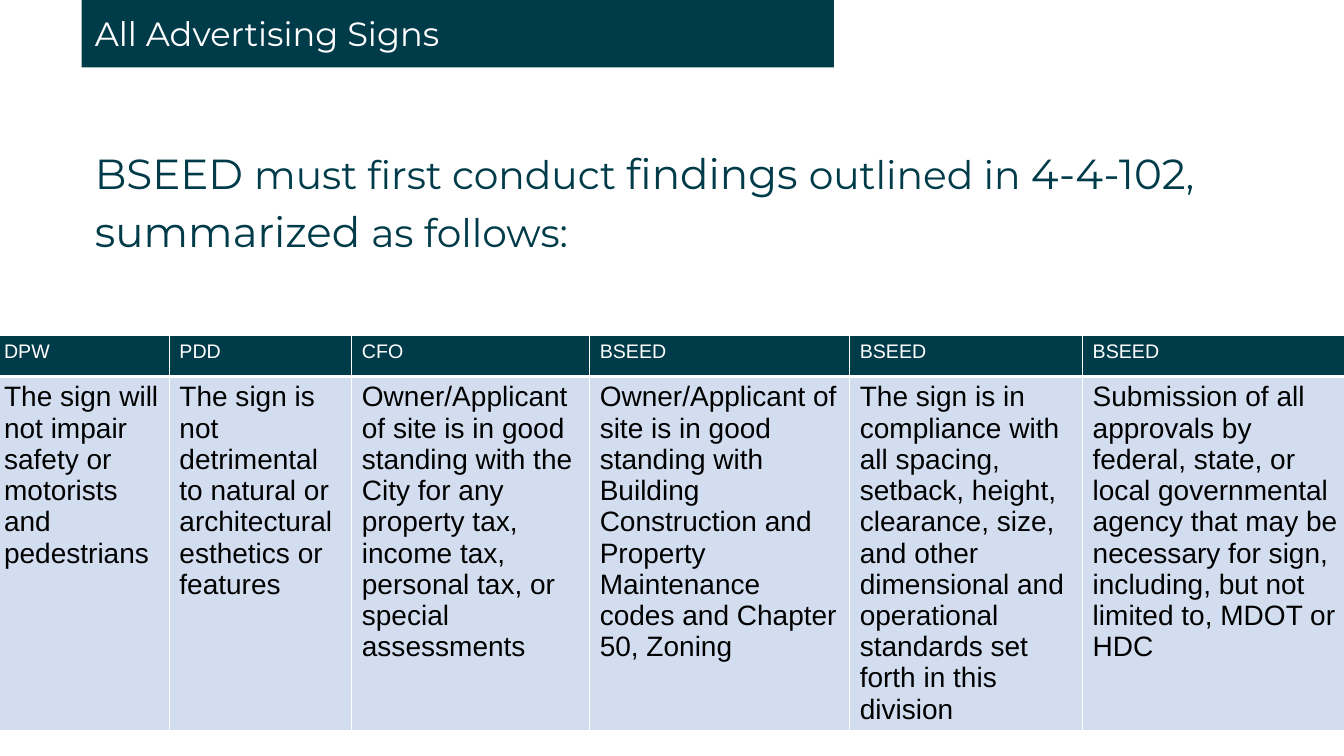
from dataclasses import dataclass

from lxml.etree import SubElement
from pptx import Presentation
from pptx.dml.color import RGBColor
from pptx.enum.shapes import MSO_SHAPE as Kind
from pptx.enum.text import MSO_ANCHOR as Anchor, MSO_AUTO_SIZE as Fit, PP_ALIGN as Align
from pptx.oxml.ns import qn
from pptx.util import Emu, Inches, Pt

WIDE, HIGH = Inches(13.33), Inches(7.5)
TEAL, PALE, WHITE, BLACK = "003B49", "D2DEEF", "FFFFFF", "000000"
LEFT = 6.08
HEAD_ROW, TEXT_ROW = 5.4, 46.67


@dataclass
class Box:
    """A place on the slide, in percent of its width and height."""
    left: float
    top: float
    width: float
    height: float


@dataclass
class Rule:
    """One finding: its department, its text and its column width in percent."""
    dept: str
    text: str
    width: float


@dataclass
class Look:
    """The style of one table row."""
    size: int
    ink: str
    fill: str
    base: int


RULES = [
    Rule("DPW", "The sign will not impair safety or motorists and pedestrians", 13.05),
    Rule("PDD", "The sign is not detrimental to natural or architectural esthetics "
         "or features", 13.58),
    Rule("CFO", "Owner/Applicant of site is in good standing with the City for any "
         "property tax, income tax, personal tax, or special assessments", 17.7),
    Rule("BSEED", "Owner/Applicant of site is in good standing with Building "
         "Construction and Property Maintenance codes and Chapter 50, Zoning", 19.35),
    Rule("BSEED", "The sign is in compliance with all spacing, setback, height, "
         "clearance, size, and other dimensional and operational standards set "
         "forth in this division", 17.33),
    Rule("BSEED", "Submission of all approvals by federal, state, or local "
         "governmental agency that may be necessary for sign, including, but not "
         "limited to, MDOT or HDC", 20.18),
]
HEAD = Look(14, WHITE, TEAL, 3)
BODY = Look(20, BLACK, PALE, 1)
LEAD = [("BSEED ", 30), ("must first conduct ", 28), ("findings ", 30),
        ("outlined in ", 28), ("4-4-102", 30), (", ", 28),
        ("summarized ", 30), ("as follows:", 28)]


def color(code: str) -> RGBColor:
    """Turn a hex string into a colour."""
    return RGBColor.from_string(code)


def across(share: float) -> Emu:
    """Turn a percent of the slide's width into a length."""
    return Emu(round(WIDE * share / 100))


def down(share: float) -> Emu:
    """Turn a percent of the slide's height into a length."""
    return Emu(round(HIGH * share / 100))


def place(box: Box) -> tuple[Emu, Emu, Emu, Emu]:
    """Give the lengths of a box."""
    return across(box.left), down(box.top), across(box.width), down(box.height)


def style(para, face: str, ink: str, size: int | None = None) -> None:
    """Set the font of a paragraph."""
    font = para.font
    font.name, font.bold = face, False
    font.color.rgb = color(ink)
    if size:
        font.size = Pt(size)


def seat(holder, box: Box):
    """Move a placeholder and return its plain first paragraph."""
    holder.left, holder.top, holder.width, holder.height = place(box)
    frame = holder.text_frame
    frame.word_wrap, frame.auto_size = True, Fit.NONE
    frame.vertical_anchor = Anchor.TOP
    frame.margin_left = frame.margin_right = Inches(0.13)
    frame.margin_top = frame.margin_bottom = Inches(0.13)
    para = frame.paragraphs[0]
    para.alignment, para.space_before = Align.LEFT, Pt(0)
    return para


def add_lead(slide) -> None:
    """Write the lead sentence in the body placeholder."""
    para = seat(slide.placeholders[1], Box(LEFT, 16.8, 91.07, 17.6))
    para.line_spacing = 1.15
    style(para, "Montserrat", TEAL)
    for text, size in LEAD:
        run = para.add_run()
        run.text, run.font.size = text, Pt(size)
    props = para._p.get_or_add_pPr()
    props.set("marL", "0")
    props.set("indent", "0")
    props.find(qn("a:defRPr")).addprevious(props.makeelement(qn("a:buNone"), {}))


def add_title(slide) -> None:
    """Draw the title bar and set the title on it."""
    bar = slide.shapes.add_shape(Kind.RECTANGLE, *place(Box(LEFT, 0, 55.96, 8.93)))
    bar.shadow.inherit = False
    bar.fill.solid()
    bar.fill.fore_color.rgb = color(TEAL)
    bar.line.fill.background()
    title = slide.shapes.title
    para = seat(title, Box(LEFT, 0, 52.14, 6))
    para.text = "All Advertising Signs"
    style(para, "Montserrat", WHITE, 24)
    bar._element.addnext(title._element)


def edge(cell, base: int) -> None:
    """Give a cell white borders, with its own width at the base."""
    props = cell._tc.get_or_add_tcPr()
    for side, size in zip("LRTB", (1, 1, 1, base)):
        line = SubElement(props, qn(f"a:ln{side}"), w=str(Pt(size)))
        fill = SubElement(line, qn("a:solidFill"))
        SubElement(fill, qn("a:srgbClr"), val=WHITE)


def fill_cell(cell, text: str, look: Look) -> None:
    """Write and style one table cell."""
    cell.text = text
    style(cell.text_frame.paragraphs[0], "Arial", look.ink, look.size)
    edge(cell, look.base)
    cell.fill.solid()
    cell.fill.fore_color.rgb = color(look.fill)


def add_rules(slide) -> None:
    """Add the table of findings."""
    width = sum(rule.width for rule in RULES)
    box = Box(-0.45, 44.4, width, HEAD_ROW + TEXT_ROW)
    table = slide.shapes.add_table(2, len(RULES), *place(box)).table
    table.first_row = table.horz_banding = False
    for row, share in zip(table.rows, (HEAD_ROW, TEXT_ROW)):
        row.height = down(share)
    for col, rule in enumerate(RULES):
        table.columns[col].width = across(rule.width)
        fill_cell(table.cell(0, col), rule.dept, HEAD)
        fill_cell(table.cell(1, col), rule.text, BODY)


def main() -> None:
    """Build and save the slide."""
    deck = Presentation()
    deck.slide_width, deck.slide_height = WIDE, HIGH
    slide = deck.slides.add_slide(deck.slide_layouts[1])
    add_lead(slide)
    add_title(slide)
    add_rules(slide)
    deck.save("out.pptx")


if __name__ == "__main__":
    main()
